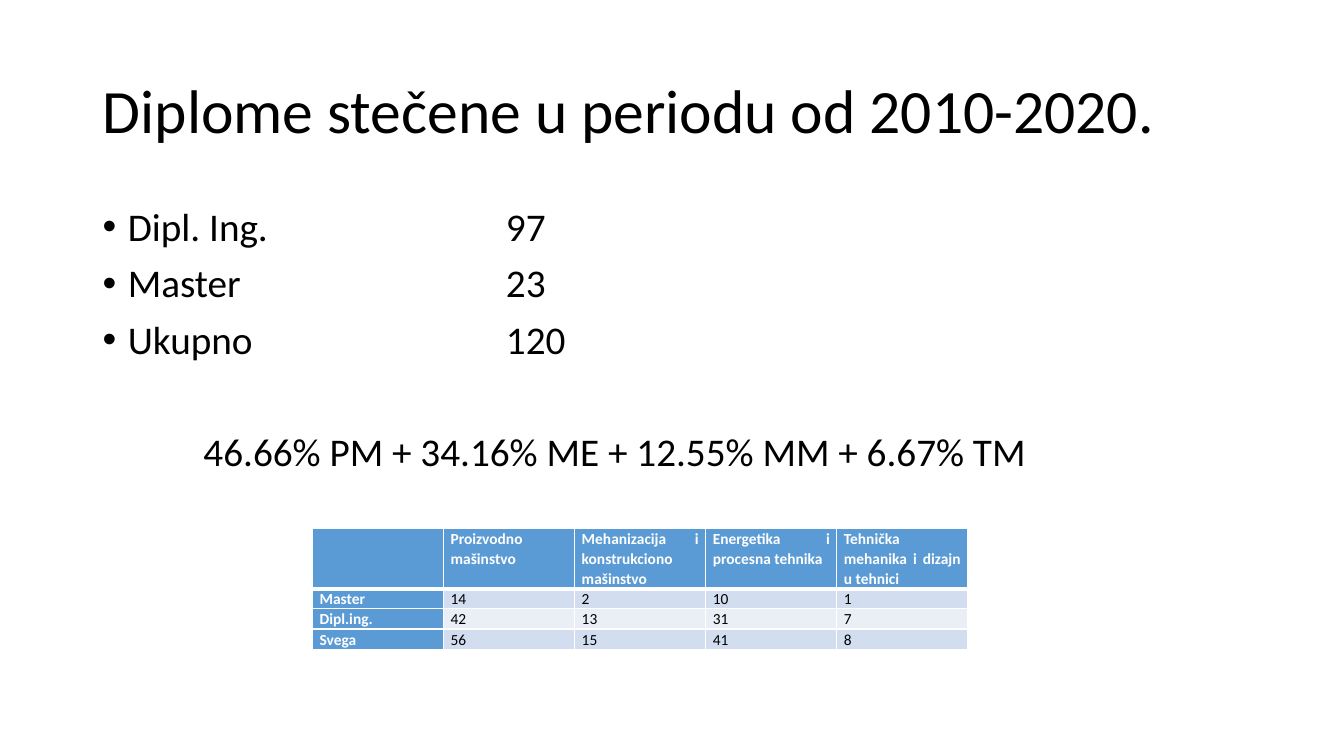
from dataclasses import dataclass

from lxml import etree
from pptx import Presentation
from pptx.dml.color import RGBColor
from pptx.enum.text import MSO_ANCHOR, PP_ALIGN
from pptx.oxml.ns import qn
from pptx.slide import Slide
from pptx.util import Pt

EMU_PER_PX = 9144
FONT = "Calibri"
LEFT = PP_ALIGN.LEFT
JUSTIFY = PP_ALIGN.JUSTIFY
TOP = MSO_ANCHOR.TOP
MIDDLE = MSO_ANCHOR.MIDDLE

BLACK = RGBColor(0x00, 0x00, 0x00)
WHITE = RGBColor(0xFF, 0xFF, 0xFF)
HEADER_BLUE = RGBColor(0x5B, 0x9B, 0xD5)
BANDS = (RGBColor(0xD2, 0xDE, 0xEF), RGBColor(0xEA, 0xEF, 0xF7))

COLUMN_WIDTH = 130
HEADER_HEIGHT = 60
ROW_HEIGHT = 20


@dataclass(frozen=True)
class Line:
    text: str
    margin: int
    indent: int = 0
    space_before: int = 10
    tab_stop: int = 0


TITLE = "Diplome stečene u periodu od 2010-2020."
LINES = [
    *(
        Line(f"{degree}\t{count}", margin=25, indent=-25, tab_stop=400)
        for degree, count in (("Dipl. Ing.", 97), ("Master", 23), ("Ukupno", 120))
    ),
    Line("46.66% PM + 34.16% ME + 12.55% MM + 6.67% TM", margin=100, space_before=50),
]
TABLE_ROWS = [
    (
        "",
        "Proizvodno mašinstvo",
        "Mehanizacija i konstrukciono mašinstvo",
        "Energetika i procesna tehnika",
        "Tehnička mehanika i dizajn u tehnici",
    ),
    ("Master", "14", "2", "10", "1"),
    ("Dipl.ing.", "42", "13", "31", "7"),
    ("Svega", "56", "15", "41", "8"),
]


def px(length: int) -> int:
    return length * EMU_PER_PX


def add_run(paragraph, text: str, size: int, color: RGBColor, bold: bool = False) -> None:
    run = paragraph.add_run()
    run.text = text
    run.font.name = FONT
    run.font.size = Pt(size)
    run.font.bold = bold
    run.font.color.rgb = color


def format_title(slide: Slide) -> None:
    title = slide.shapes.title
    title.left, title.top, title.width, title.height = map(px, (92, 40, 1150, 145))
    title.text_frame.vertical_anchor = MIDDLE
    paragraph = title.text_frame.paragraphs[0]
    paragraph.alignment = LEFT
    paragraph.line_spacing = 0.9
    add_run(paragraph, TITLE, 44, BLACK)


def add_lines(slide: Slide, lines: list[Line]) -> None:
    text_frame = slide.shapes.add_textbox(*map(px, (92, 201, 1150, 476))).text_frame
    text_frame.word_wrap = True
    for index, line in enumerate(lines):
        paragraph = text_frame.add_paragraph() if index else text_frame.paragraphs[0]
        paragraph.line_spacing = 0.9
        paragraph.space_before = Pt(line.space_before)
        properties = paragraph._p.get_or_add_pPr()
        properties.set("marL", str(px(line.margin)))
        properties.set("indent", str(px(line.indent)))
        if line.indent:
            etree.SubElement(properties, qn("a:buFont"), typeface="Arial")
            etree.SubElement(properties, qn("a:buChar"), char="•")
        else:
            etree.SubElement(properties, qn("a:buNone"))
        if line.tab_stop:
            tabs = etree.SubElement(properties, qn("a:tabLst"))
            etree.SubElement(tabs, qn("a:tab"), pos=str(px(line.tab_stop)), algn="l")
        add_run(paragraph, line.text, 28, BLACK)


def set_borders(cell, top: int, bottom: int) -> None:
    properties = cell._tc.get_or_add_tcPr()
    for side, points in (("L", 1), ("R", 1), ("T", top), ("B", bottom)):
        border = etree.SubElement(properties, qn(f"a:ln{side}"), w=str(Pt(points)))
        fill = etree.SubElement(border, qn("a:solidFill"))
        etree.SubElement(fill, qn("a:srgbClr"), val=str(WHITE))


def add_degree_table(slide: Slide, rows: list[tuple[str, ...]]) -> None:
    column_count = len(rows[0])
    height = HEADER_HEIGHT + ROW_HEIGHT * (len(rows) - 1)
    table = slide.shapes.add_table(
        len(rows), column_count,
        *map(px, (310, 524, COLUMN_WIDTH * column_count, height)),
    ).table
    for column in table.columns:
        column.width = px(COLUMN_WIDTH)
    for row_index, texts in enumerate(rows):
        table.rows[row_index].height = px(ROW_HEIGHT if row_index else HEADER_HEIGHT)
        for column_index, text in enumerate(texts):
            is_heading = row_index == 0 or column_index == 0
            cell = table.cell(row_index, column_index)
            set_borders(cell, 3 if row_index == 1 else 1, 1 if row_index else 3)
            cell.fill.solid()
            cell.fill.fore_color.rgb = HEADER_BLUE if is_heading else BANDS[(row_index - 1) % 2]
            cell.margin_left = cell.margin_right = px(7)
            cell.margin_top = cell.margin_bottom = 0
            cell.vertical_anchor = TOP
            if text:
                paragraph = cell.text_frame.paragraphs[0]
                paragraph.alignment = JUSTIFY
                paragraph.line_spacing = 1.07
                add_run(paragraph, text, 11, WHITE if is_heading else BLACK, is_heading)


def main() -> None:
    presentation = Presentation()
    presentation.slide_width = px(1333)
    presentation.slide_height = px(750)
    slide = presentation.slides.add_slide(presentation.slide_layouts.get_by_name("Title Only"))
    format_title(slide)
    add_lines(slide, LINES)
    add_degree_table(slide, TABLE_ROWS)
    presentation.save("out.pptx")


if __name__ == "__main__":
    main()
